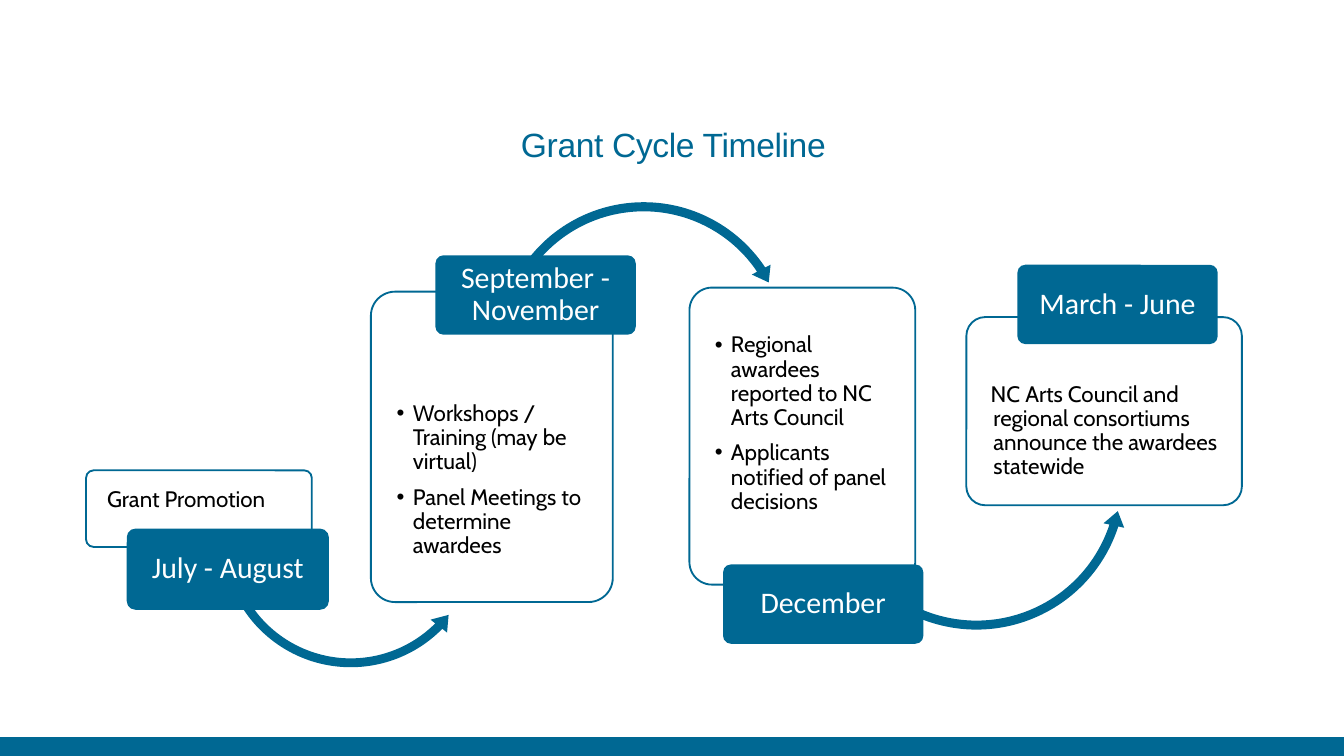
import pptx
import pptx.util
import pptx.dml.color
import pptx.enum.shapes
import pptx.enum.text
import pptx.oxml
import pptx.oxml.ns
from lxml import etree

Inches, Pt = pptx.util.Inches, pptx.util.Pt
SHAPE = pptx.enum.shapes.MSO_SHAPE
ALIGN = pptx.enum.text.PP_ALIGN
MIDDLE = pptx.enum.text.MSO_ANCHOR.MIDDLE
qn = pptx.oxml.ns.qn

# Content
WIDTH = 10
HEIGHT = WIDTH * 9 / 16
BLUE, WHITE, BLACK = "006893", "FFFFFF", "000000"
TITLE = "Grant Cycle Timeline"
LABEL_SIZE = (1.49, 0.59)
LABEL_ROOM = 0.214  # share of a card's height kept clear for its label
PAD = 0.14
BAR_HEIGHT = 0.14

# card: left, top, width, height; drop: extra space above the text
STEPS = [
    dict(label="July - August", label_at=(0.95, 3.94), label_line=True, side="bottom",
         card=(0.64, 3.5, 1.68, 0.57), drop=0, bullets=False, indent=0.12,
         lines=["Grant Promotion"]),
    dict(label="September - November", label_at=(3.24, 1.9), label_line=False, side="top",
         card=(2.76, 2.17, 1.8, 2.31), drop=0, bullets=True, indent=0.12,
         lines=["Workshops / Training (may be virtual)",
                "Panel Meetings to determine awardees"]),
    dict(label="December", label_at=(5.38, 4.2), label_line=False, side="bottom",
         card=(5.13, 2.14, 1.68, 2.21), drop=0.29, bullets=True, indent=0.12,
         lines=["Regional awardees reported to NC Arts Council",
                "Applicants notified of panel decisions"]),
    dict(label="March - June", label_at=(7.57, 1.97), label_line=False, side="top",
         card=(7.19, 2.36, 2.05, 1.4), drop=0, bullets=False, indent=0.02,
         lines=["NC Arts Council and regional consortiums announce the awardees statewide"]),
]

# Arrow leaving each step but the last: preset, left, top, size, rotation,
# (band %, head angle, end angle, start angle, head %)
ARROWS = [
    (SHAPE.LEFT_CIRCULAR_ARROW, 1.61, 3.01, 2, 15.7, (3.3, 6.89, 29.03, 142.96, 3.9)),
    (SHAPE.CIRCULAR_ARROW, 3.66, 1.46, 2.26, 350.8, (3, 6.04, 335.5, 220.73, 3.5)),
    (SHAPE.LEFT_CIRCULAR_ARROW, 6.11, 2.42, 2.31, 5.9, (2.9, 5.91, 12.26, 127.17, 3.4)),
]
PERCENT, DEGREE = 0.01, 0.6  # adjustment units
ARROW_UNITS = (PERCENT, DEGREE, DEGREE, DEGREE, PERCENT)


def color(value):
    return pptx.dml.color.RGBColor.from_string(value)


def add_shape(kind, box, fill, line=None, adjustments=()):
    s = slide.shapes.add_shape(kind, *(Inches(v) for v in box))
    s.shadow.inherit = False
    s.fill.solid()
    s.fill.fore_color.rgb = color(fill)
    if line:
        s.line.color.rgb = color(line)
        s.line.width = Pt(1)
    else:
        s.line.fill.background()
    for i, value in enumerate(adjustments):
        s.adjustments[i] = value
    return s


def set_text(s, lines, font, size, ink, align, margins, spacing=0.9):
    tf = s.text_frame
    tf.word_wrap = True
    tf.vertical_anchor = MIDDLE
    tf.margin_left, tf.margin_top, tf.margin_right, tf.margin_bottom = map(Inches, margins)
    tf.text = "\n".join(lines)
    for p in tf.paragraphs:
        p.alignment = align
        p.line_spacing = spacing
        for r in p.runs:
            r.font.name, r.font.size = font, Pt(size)
            r.font.color.rgb = color(ink)
    return tf


def add_card(step):
    s = add_shape(SHAPE.ROUNDED_RECTANGLE, step["card"], WHITE, BLUE, [0.1])
    rgb = s.fill._xPr.find(".//" + qn("a:srgbClr"))
    etree.SubElement(rgb, qn("a:alpha")).set("val", "90000")
    room = LABEL_ROOM * step["card"][3]
    top = PAD + step["drop"] + (room if step["side"] == "top" else 0)
    bottom = PAD + (room if step["side"] == "bottom" else 0)
    tf = set_text(s, step["lines"], "Cabin", 12, BLACK, ALIGN.LEFT, (PAD, top, PAD, bottom))
    for p in tf.paragraphs:
        pPr = p._p.get_or_add_pPr()
        pPr.set("marL", str(Inches(step["indent"])))
        pPr.set("indent", str(-Inches(step["indent"])))
        if step["bullets"]:
            p.space_after = Pt(6)
            etree.SubElement(pPr, qn("a:buFont")).set("typeface", "Arial")
            etree.SubElement(pPr, qn("a:buChar")).set("char", "•")


def add_label(step):
    s = add_shape(SHAPE.ROUNDED_RECTANGLE, step["label_at"] + LABEL_SIZE, BLUE,
                  BLUE if step["label_line"] else None, [0.1])
    set_text(s, [step["label"]], "Calibri", 16, WHITE, ALIGN.CENTER, (0.03, 0.02, 0.03, 0.02))


prs = pptx.Presentation()
prs.slide_width, prs.slide_height = Inches(WIDTH), Inches(HEIGHT)
slide = prs.slides.add_slide(prs.slide_layouts[6])

# Title
title = slide.shapes.add_textbox(*(Inches(v) for v in (1.3, 0.9, 7.42, 0.32)))
tf = set_text(title, [TITLE], "Arial", 18, BLUE, ALIGN.CENTER, (0, 0, 0, 0), Pt(23.4))
tf.paragraphs[0].runs[0].font._element.set("spc", "-20")

# Timeline: each arrow runs behind the label it leaves from
for i, step in enumerate(STEPS):
    add_card(step)
    if i < len(ARROWS):
        kind, left, top, size, rotation, bend = ARROWS[i]
        adjustments = [value * unit for value, unit in zip(bend, ARROW_UNITS)]
        arrow = add_shape(kind, (left, top, size, size), BLUE, adjustments=adjustments)
        arrow.rotation = rotation
    add_label(step)

# Footer bar
add_shape(SHAPE.RECTANGLE, (0, HEIGHT - BAR_HEIGHT, WIDTH, BAR_HEIGHT), BLUE)

prs.save("out.pptx")
